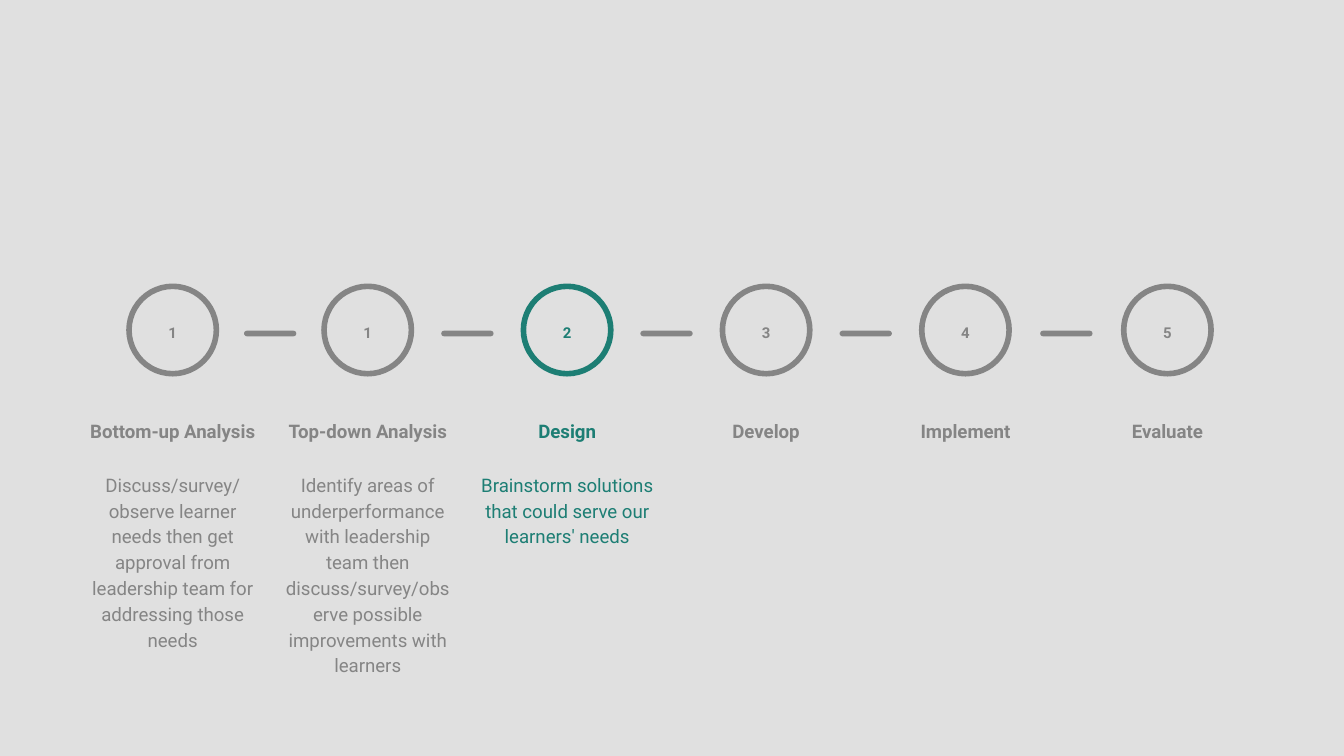
from dataclasses import dataclass

from pptx import Presentation
from pptx.dml.color import RGBColor
from pptx.enum.shapes import MSO_SHAPE
from pptx.enum.text import MSO_ANCHOR, PP_ALIGN
from pptx.util import Pt

BACKGROUND = RGBColor(0xE0, 0xE0, 0xE0)
GRAY = RGBColor(0x85, 0x85, 0x85)
TEAL = RGBColor(0x1D, 0x7E, 0x74)

NARROW, WIDE = 103, 107.3
RING_TOP, RING_SIZE = 153.4, 46.8
DASH_TOP, DASH_WIDTH, DASH_HEIGHT = 177.2, 28, 3


@dataclass
class Step:
    center: float
    number: str
    heading: str
    width: float = NARROW
    description: str = ""
    color: RGBColor = GRAY


STEPS = [
    Step(92.5, "1", "Bottom-up Analysis",
         description="Discuss/survey/observe learner needs then get approval "
                     "from leadership team for addressing those needs"),
    Step(197, "1", "Top-down Analysis",
         description="Identify areas of underperformance with leadership team then "
                     "discuss/survey/observe possible improvements with learners"),
    Step(303.8, "2", "Design", WIDE,
         "Brainstorm solutions that could serve our learners' needs", TEAL),
    Step(410.4, "3", "Develop"),
    Step(517.2, "4", "Implement", WIDE),
    Step(625.4, "5", "Evaluate", WIDE),
]


def write_text(frame, text, *, color, size=10, bold=False, space_after=0,
               anchor=MSO_ANCHOR.TOP, font="Roboto", inset=7.2):
    frame.word_wrap = True
    frame.vertical_anchor = anchor
    frame.margin_left = frame.margin_right = Pt(inset)
    frame.margin_top = frame.margin_bottom = Pt(inset)
    paragraph = frame.paragraphs[0]
    paragraph.alignment = PP_ALIGN.CENTER
    paragraph.line_spacing = 1.15
    paragraph.space_after = Pt(space_after)
    run = paragraph.add_run()
    run.text = text
    run.font.name = font
    run.font.size = Pt(size)
    run.font.bold = bold
    run.font.color.rgb = color


class ProcessSlide:
    """Draws centred elements on one slide, with lengths in points."""

    def __init__(self, slide):
        self.slide = slide
        slide.background.fill.solid()
        slide.background.fill.fore_color.rgb = BACKGROUND

    def text(self, shapes, content, center, top, width, height, **style):
        box = shapes.add_textbox(Pt(center - width / 2), Pt(top), Pt(width), Pt(height))
        write_text(box.text_frame, content, **style)

    def ring(self, shapes, center, color):
        ring = shapes.add_shape(MSO_SHAPE.OVAL, Pt(center - RING_SIZE / 2), Pt(RING_TOP),
                                Pt(RING_SIZE), Pt(RING_SIZE))
        ring.shadow.inherit = False
        ring.fill.background()
        ring.line.color.rgb = color
        ring.line.width = Pt(3)

    def dash(self, center):
        dash = self.slide.shapes.add_shape(
            MSO_SHAPE.ROUNDED_RECTANGLE, Pt(center - DASH_WIDTH / 2), Pt(DASH_TOP),
            Pt(DASH_WIDTH), Pt(DASH_HEIGHT))
        dash.adjustments[0] = 0.5
        dash.shadow.inherit = False
        dash.fill.solid()
        dash.fill.fore_color.rgb = GRAY
        dash.line.fill.background()

    def step(self, step):
        shapes = self.slide.shapes.add_group_shape().shapes
        self.ring(shapes, step.center, step.color)
        self.text(shapes, step.number, step.center, 166.3, 34.6, 25.2,
                  color=step.color, size=8, bold=True, space_after=16)
        self.text(shapes, step.heading, step.center, 208.8, step.width, 35.3,
                  color=step.color, bold=True, anchor=MSO_ANCHOR.BOTTOM)
        if step.description:
            self.text(shapes, step.description, step.center, 244.8, step.width, 58.3,
                      color=step.color, space_after=16)


def main():
    presentation = Presentation()
    presentation.slide_width, presentation.slide_height = Pt(720), Pt(405)
    blank_layout = presentation.slide_layouts[6]
    process = ProcessSlide(presentation.slides.add_slide(blank_layout))
    for step in STEPS:
        process.step(step)
    for left, right in zip(STEPS, STEPS[1:]):
        process.dash((left.center + right.center) / 2)
    presentation.save("out.pptx")


if __name__ == "__main__":
    main()
